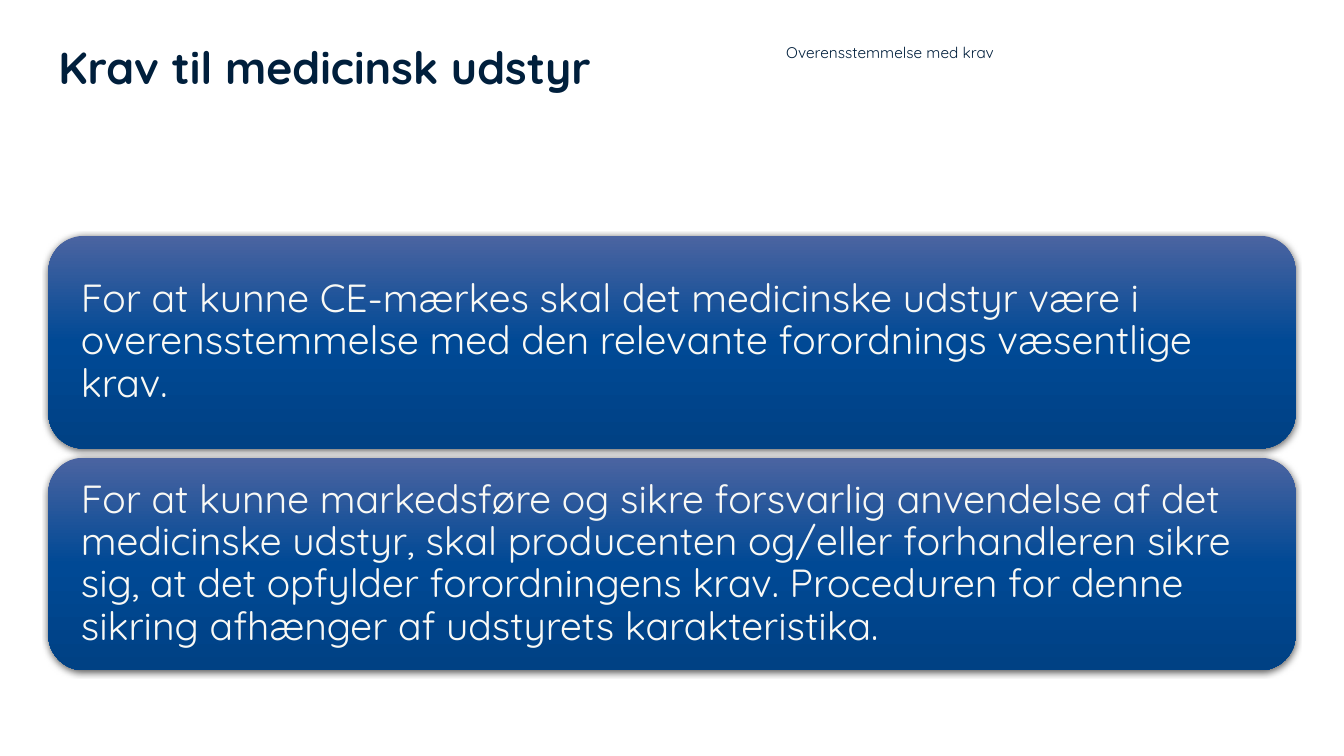
from copy import deepcopy
from dataclasses import dataclass

from lxml import etree
from pptx import Presentation
from pptx.dml.color import RGBColor
from pptx.enum.shapes import MSO_SHAPE
from pptx.enum.text import MSO_ANCHOR, MSO_AUTO_SIZE, PP_ALIGN
from pptx.oxml.ns import qn
from pptx.util import Pt

# Content
TITLE = "Krav til medicinsk udstyr"
SUBTITLE = "Overensstemmelse med krav"
REQUIREMENTS = [
    "For at kunne CE-mærkes skal det medicinske udstyr være i overensstemmelse "
    "med den relevante forordnings væsentlige krav.",
    "For at kunne markedsføre og sikre forsvarlig anvendelse af det medicinske "
    "udstyr, skal producenten og/eller forhandleren sikre sig, at det opfylder "
    "forordningens krav. Proceduren for denne sikring afhænger af udstyrets "
    "karakteristika.",
]

# Layout in px, 100 to the inch
SCALE = 9144
PAGE_SIZE = (1333, 750)
TITLE_AREA = (48, 40, 709, 145)
SUBTITLE_AREA = (770, 40, 370, 145)
PANEL_LEFT, PANEL_TOP, PANEL_WIDTH, PANEL_HEIGHT = 48, 234, 1237, 211
PANEL_GAP = 9
PANEL_INSET = 22

ROUNDED = MSO_SHAPE.ROUNDED_RECTANGLE
TOP, MIDDLE = MSO_ANCHOR.TOP, MSO_ANCHOR.MIDDLE
LEFT = PP_ALIGN.LEFT
NO_FIT = MSO_AUTO_SIZE.NONE


@dataclass(frozen=True)
class Theme:
    font: str = "Quicksand"
    ink: str = "001F3C"
    panel_text: str = "F9F9F5"
    gradient: tuple = ((0, "4B64A1"), (0.5, "004995"), (1, "004184"))
    shadow: str = "000000"
    title_size: int = 32
    subtitle_size: int = 11
    panel_size: int = 28


THEME = Theme()


def px(*lengths):
    return [length * SCALE for length in lengths]


def write(shape, text, size, color, anchor=TOP, bold=False):
    frame = shape.text_frame
    frame.text = text
    frame.word_wrap = True
    frame.auto_size = NO_FIT
    frame.vertical_anchor = anchor
    para = frame.paragraphs[0]
    para.alignment = LEFT
    para.line_spacing = 0.9
    font = para.runs[0].font
    font.name, font.size, font.bold = THEME.font, Pt(size), bold
    font.color.rgb = RGBColor.from_string(color)


def fill_gradient(shape):
    fill = shape.fill
    fill.gradient()
    fill.gradient_angle = 270
    stop_list = shape.element.spPr.find(qn("a:gradFill")).find(qn("a:gsLst"))
    stop_list.insert(1, deepcopy(stop_list[0]))
    for stop, (position, color) in zip(fill.gradient_stops, THEME.gradient):
        stop.position = position
        stop.color.rgb = RGBColor.from_string(color)


def add_shadow(shape):
    shape.shadow.inherit = False
    effects = shape.element.spPr.find(qn("a:effectLst"))
    outer = etree.SubElement(effects, qn("a:outerShdw"), blurRad=str(Pt(4.5)),
                             dist=str(Pt(1.5)), dir="5400000", rotWithShape="0")
    color = etree.SubElement(outer, qn("a:srgbClr"), val=THEME.shadow)
    etree.SubElement(color, qn("a:alpha"), val="63000")


def add_panel(page, index, text):
    top = PANEL_TOP + index * (PANEL_HEIGHT + PANEL_GAP)
    panel = page.shapes.add_shape(
        ROUNDED, *px(PANEL_LEFT, top, PANEL_WIDTH, PANEL_HEIGHT))
    fill_gradient(panel)
    panel.line.fill.background()
    add_shadow(panel)
    write(panel, text, THEME.panel_size, THEME.panel_text, MIDDLE)
    frame = panel.text_frame
    frame.margin_left = frame.margin_right = PANEL_INSET * SCALE


def main():
    deck = Presentation()
    deck.slide_width, deck.slide_height = px(*PAGE_SIZE)
    page = deck.slides.add_slide(deck.slide_layouts[5])

    # Heading
    title = page.shapes.title
    title.left, title.top, title.width, title.height = px(*TITLE_AREA)
    write(title, TITLE, THEME.title_size, THEME.ink, bold=True)
    subtitle = page.shapes.add_textbox(*px(*SUBTITLE_AREA))
    write(subtitle, SUBTITLE, THEME.subtitle_size, THEME.ink)

    # Requirement panels
    for index, text in enumerate(REQUIREMENTS):
        add_panel(page, index, text)

    deck.save("out.pptx")


if __name__ == "__main__":
    main()
